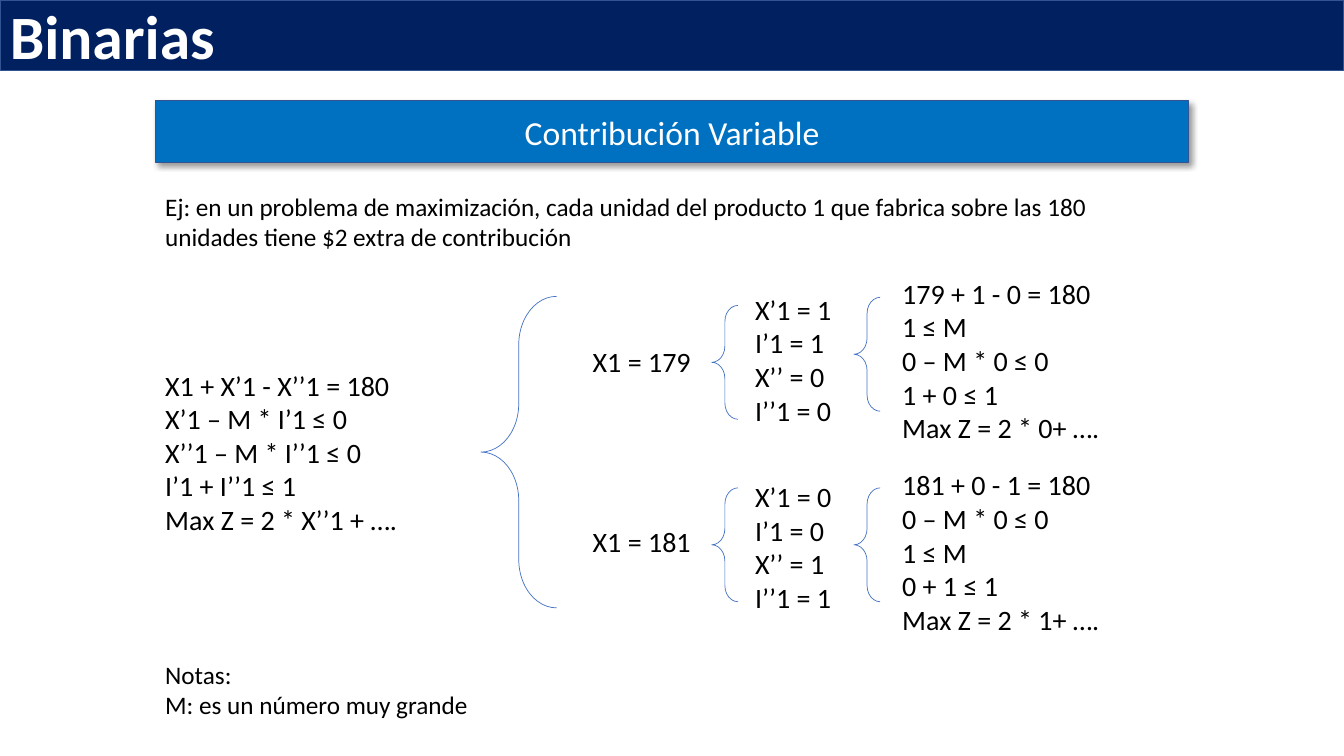
"""Builds the slide on binary variables with a variable contribution."""
from dataclasses import dataclass

from lxml.etree import SubElement
from pptx import Presentation
from pptx.dml.color import RGBColor
from pptx.enum.shapes import MSO_SHAPE
from pptx.enum.text import MSO_ANCHOR, PP_ALIGN
from pptx.oxml.ns import qn
from pptx.util import Emu, Pt

PX = 9144
SLIDE_SIZE = (1333, 750)


@dataclass(frozen=True)
class Theme:
    font: str = "Calibri"
    navy: str = "002060"
    blue: str = "0070C0"
    border: str = "325491"
    brace: str = "4472C4"
    white: str = "FFFFFF"
    black: str = "000000"
    title: int = 44
    heading: int = 24
    formula: int = 20
    body: int = 18


THEME = Theme()

TITLE = "Binarias"
HEADING = "Contribución Variable"
EXAMPLE = ["Ej: en un problema de maximización, cada unidad del producto 1 que fabrica "
           "sobre las 180 unidades tiene $2 extra de contribución"]
MODEL = ["X1 + X’1 - X’’1 = 180", "X’1 – M * I’1 ≤ 0", "X’’1 – M * I’’1 ≤ 0",
         "I’1 + I’’1 ≤ 1", "Max Z = 2 * X’’1 + …."]
NOTES = ["Notas:", "M: es un número muy grande"]
CASES = [
    {"production": ["X1 = 179"], "production_top": 323,
     "values": ["X’1 = 1", "I’1 = 1", "X’’ = 0", "I’’1 = 0"], "values_top": 285,
     "checks": ["179 + 1 - 0 = 180", "1 ≤ M", "0 – M * 0 ≤ 0", "1 + 0 ≤ 1",
                "Max Z = 2 * 0+ …."], "checks_top": 237,
     "brace_tops": (303, 295)},
    {"production": ["X1 = 181"], "production_top": 502,
     "values": ["X’1 = 0", "I’1 = 0", "X’’ = 1", "I’’1 = 1"], "values_top": 471,
     "checks": ["181 + 0 - 1 = 180", "0 – M * 0 ≤ 0", "1 ≤ M", "0 + 1 ≤ 1",
                "Max Z = 2 * 1+ …."], "checks_top": 427,
     "brace_tops": (484, 484)},
]

MARGIN, CONTENT_WIDTH = 154, 1025
FORMULA_SIZE = (323, 241)
PRODUCTION_LEFT, VALUES_LEFT, CHECKS_LEFT = 578, 739, 885
BRACE_LEFTS = (706, 847)
BRACE_SIZE = (26, 113)


def emu(*lengths):
    return [Emu(length * PX) for length in lengths]


def write(shape, lines, size, color=THEME.black, anchor=MSO_ANCHOR.MIDDLE,
          align=PP_ALIGN.LEFT, bold=False):
    frame = shape.text_frame
    frame.word_wrap = True
    frame.vertical_anchor = anchor
    for index, line in enumerate(lines):
        paragraph = frame.add_paragraph() if index else frame.paragraphs[0]
        paragraph.text = line
        paragraph.alignment = align
        paragraph.font.name = THEME.font
        paragraph.font.size = Pt(size)
        paragraph.font.bold = bold
        paragraph.font.color.rgb = RGBColor.from_string(color)


def add_text(slide, box, lines, size=THEME.formula, anchor=MSO_ANCHOR.MIDDLE):
    write(slide.shapes.add_textbox(*emu(*box)), lines, size, anchor=anchor)


def add_banner(slide, box, fill):
    banner = slide.shapes.add_shape(MSO_SHAPE.RECTANGLE, *emu(*box))
    banner.shadow.inherit = False
    banner.fill.solid()
    banner.fill.fore_color.rgb = RGBColor.from_string(fill)
    banner.line.color.rgb = RGBColor.from_string(THEME.border)
    banner.line.width = Pt(1)
    return banner


def cast_shadow(shape):
    effects = shape.fill.fore_color and shape.element.spPr.find(qn("a:effectLst"))
    shadow = SubElement(effects, qn("a:outerShdw"), blurRad=str(Pt(4)), dist=str(Pt(3)),
                        dir="2700000", algn="tl", rotWithShape="0")
    tint = SubElement(shadow, qn("a:srgbClr"), val=THEME.black)
    SubElement(tint, qn("a:alpha"), val="40000")


def add_brace(slide, box, curl):
    brace = slide.shapes.add_shape(MSO_SHAPE.LEFT_BRACE, *emu(*box))
    brace.shadow.inherit = False
    brace.fill.background()
    brace.line.color.rgb = RGBColor.from_string(THEME.brace)
    brace.line.width = Pt(0.5)
    brace.adjustments[0] = curl
    brace.adjustments[1] = 0.5


def add_case(slide, case):
    add_text(slide, (PRODUCTION_LEFT, case["production_top"], 128, 70), case["production"])
    add_text(slide, (VALUES_LEFT, case["values_top"], 121, 145), case["values"],
             anchor=MSO_ANCHOR.TOP)
    add_text(slide, (CHECKS_LEFT, case["checks_top"], *FORMULA_SIZE), case["checks"])
    for left, top in zip(BRACE_LEFTS, case["brace_tops"]):
        add_brace(slide, (left, top, *BRACE_SIZE), 0.62)


def main():
    deck = Presentation()
    deck.slide_width, deck.slide_height = emu(*SLIDE_SIZE)
    slide = deck.slides.add_slide(deck.slide_layouts[6])

    title = add_banner(slide, (0, 0, SLIDE_SIZE[0], 70), THEME.navy)
    write(title, [TITLE], THEME.title, THEME.white, bold=True)
    heading = add_banner(slide, (MARGIN, 100, CONTENT_WIDTH, 61), THEME.blue)
    cast_shadow(heading)
    write(heading, [HEADING], THEME.heading, THEME.white, align=PP_ALIGN.CENTER)

    add_text(slide, (MARGIN, 185, CONTENT_WIDTH, 71), EXAMPLE, THEME.body, MSO_ANCHOR.TOP)
    add_text(slide, (MARGIN, 328, *FORMULA_SIZE), MODEL)
    add_text(slide, (MARGIN, 649, 681, 71), NOTES, THEME.body, MSO_ANCHOR.TOP)
    add_brace(slide, (477, 294, 75, 309), 0.64)
    for case in CASES:
        add_case(slide, case)

    deck.save("out.pptx")


if __name__ == "__main__":
    main()
